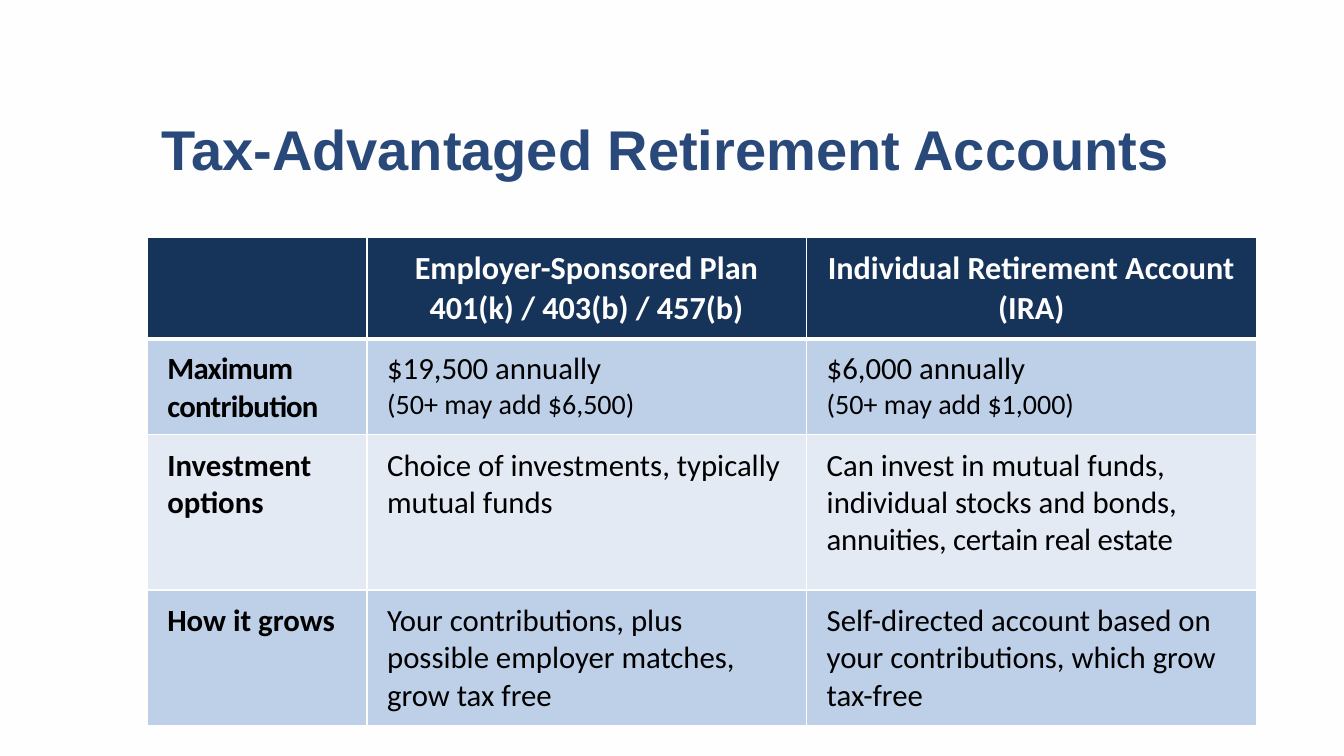
from lxml import etree
from pptx import Presentation
from pptx.dml.color import RGBColor
from pptx.enum.text import MSO_ANCHOR as Anchor, PP_ALIGN as Align
from pptx.oxml.ns import qn
from pptx.util import Inches, Pt

COLORS = {
    "paper": "FFFEFE",
    "title": "29497A",
    "header": "16345A",
    "band_dark": "BECFE8",
    "band_light": "E4EAF4",
    "ink": "000000",
}
COL_WIDTHS = [2.18, 4.36, 4.46]
ROW_HEIGHTS = [1, 0.95, 1.54, 1.35]

# Each cell is a list of paragraphs, each paragraph a list of runs:
# (text, size in points, letter spacing in points)
HEADERS = [
    [],
    [[("Employer-Sponsored Plan", 23, 0)], [("401(k) / 403(b) / 457(b)", 23, 0)]],
    [[("Individual Retirement Account (IRA)", 23, 0)]],
]
BODY = [
    [
        [[("Maximum contribution", 22, -0.5)]],
        [[("$19,500 annually", 22, 0)], [("(50+ may add $6,500)", 20, 0)]],
        [[("$6,000 annually", 22, 0)], [("(50+ may add $1,000)", 20, 0)]],
    ],
    [
        [[("Investment options", 22, 0)]],
        [[("Choice of investments, typically mutual funds", 22, 0)]],
        [[("Can invest in mutual funds, individual stocks and bonds, ", 22, 0),
          ("annuities, certain real estate", 22, -0.2)]],
    ],
    [
        [[("How it grows", 22, 0)]],
        [[("Your contributions, plus possible employer matches, grow tax free", 22, 0)]],
        [[("Self-directed account based on your contributions, which grow tax-free", 22, 0)]],
    ],
]


def rgb(name):
    return RGBColor.from_string(COLORS[name])


def add_run(p, text, size, font, color, bold, spacing=0):
    r = p.add_run()
    r.text = text
    r.font.size = Pt(size)
    r.font.name = font
    r.font.bold = bold
    r.font.color.rgb = rgb(color)
    if spacing:
        r._r.get_or_add_rPr().set("spc", str(round(spacing * 100)))


def add_title(s, text):
    sp = s.shapes.add_textbox(Inches(1.5), Inches(0.79), Inches(10.92), Inches(1.45))
    tf = sp.text_frame
    tf.word_wrap = True
    tf.vertical_anchor = Anchor.MIDDLE
    p = tf.paragraphs[0]
    p.line_spacing = 0.9
    add_run(p, text, 40, "Arial", "title", True)


def set_borders(cell, widths):
    tc_pr = cell._tc.get_or_add_tcPr()
    for side, width in widths.items():
        ln = etree.SubElement(tc_pr, qn(f"a:ln{side}"), w=str(Pt(width)))
        fill = etree.SubElement(ln, qn("a:solidFill"))
        etree.SubElement(fill, qn("a:srgbClr"), val=COLORS["paper"])


def fill_cell(cell, paragraphs, fill, color, bold, align):
    cell.fill.solid()
    cell.fill.fore_color.rgb = rgb(fill)
    tf = cell.text_frame
    for i, runs in enumerate(paragraphs):
        p = tf.add_paragraph() if i else tf.paragraphs[0]
        p.alignment = align
        for text, size, spacing in runs:
            add_run(p, text, size, "Calibri", color, bold, spacing)


def add_accounts_table(s):
    frame = s.shapes.add_table(
        len(ROW_HEIGHTS), len(COL_WIDTHS), Inches(1.46), Inches(2.36),
        Inches(sum(COL_WIDTHS)), Inches(sum(ROW_HEIGHTS)))
    table = frame.table
    for col, width in zip(table.columns, COL_WIDTHS):
        col.width = Inches(width)
    for row, height in zip(table.rows, ROW_HEIGHTS):
        row.height = Inches(height)

    # Header row, with a thick rule below
    for c, paragraphs in enumerate(HEADERS):
        cell = table.cell(0, c)
        set_borders(cell, {"L": 1, "R": 1, "T": 1, "B": 3})
        cell.vertical_anchor = Anchor.MIDDLE
        fill_cell(cell, paragraphs, "header", "paper", True, Align.CENTER)

    # Body rows in alternating bands, with a bold first column
    for r, row in enumerate(BODY, start=1):
        band = "band_dark" if r % 2 else "band_light"
        for c, paragraphs in enumerate(row):
            cell = table.cell(r, c)
            set_borders(cell, {"L": 1, "R": 1, "T": 3 if r == 1 else 1, "B": 1})
            cell.margin_left = cell.margin_right = Inches(0.2)
            cell.margin_top = Inches(0.12)
            cell.margin_bottom = Inches(0.1)
            fill_cell(cell, paragraphs, band, "ink", c == 0, Align.LEFT)


def main():
    prs = Presentation()
    prs.slide_width = Inches(13.33)
    prs.slide_height = Inches(7.5)
    s = prs.slides.add_slide(prs.slide_layouts[6])
    s.background.fill.solid()
    s.background.fill.fore_color.rgb = rgb("paper")
    add_title(s, "Tax-Advantaged Retirement Accounts")
    add_accounts_table(s)
    prs.save("out.pptx")


if __name__ == "__main__":
    main()
